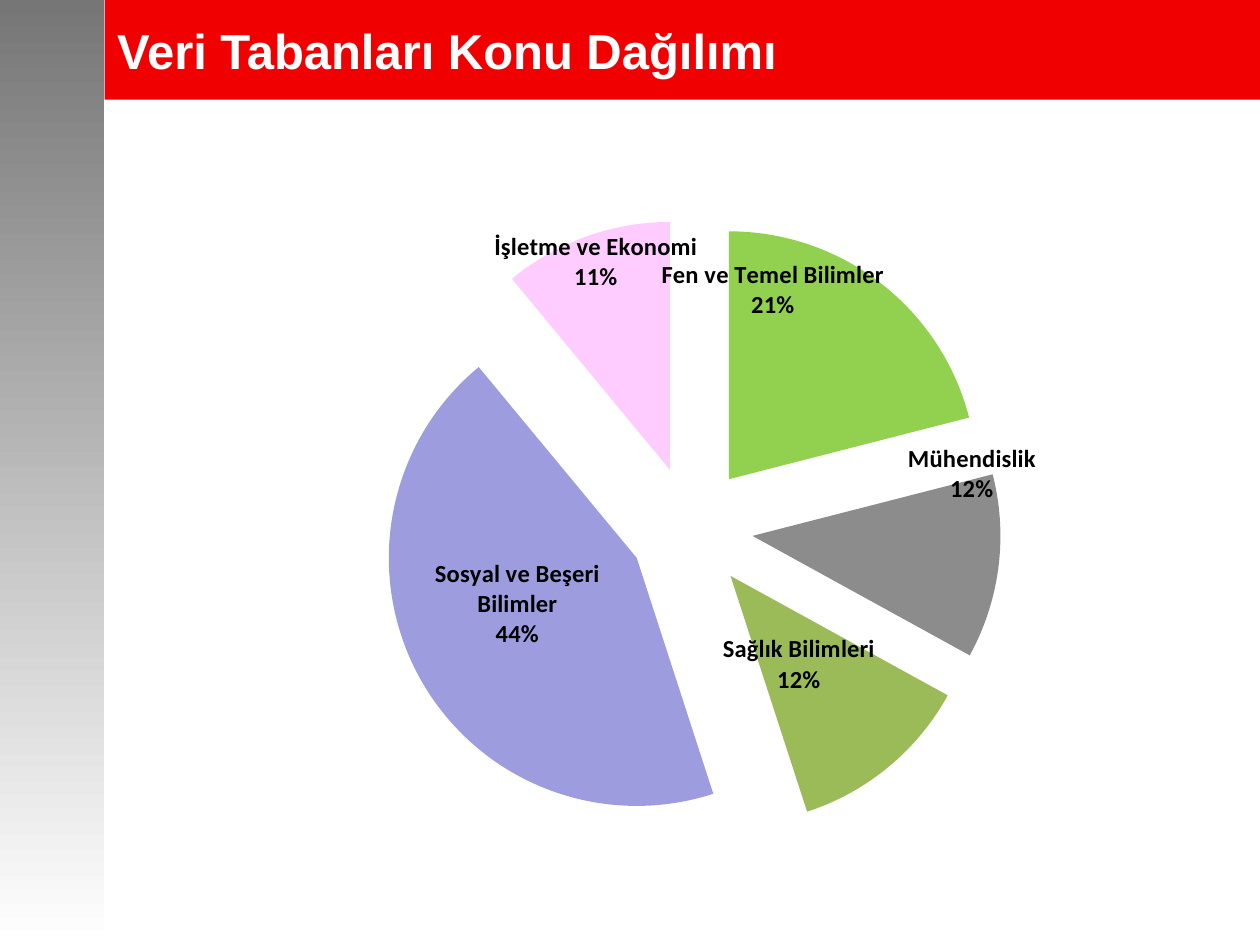
from dataclasses import dataclass

from lxml import etree
from pptx import Presentation
from pptx.chart.data import CategoryChartData
from pptx.dml.color import RGBColor
from pptx.enum.chart import XL_CHART_TYPE, XL_LABEL_POSITION
from pptx.enum.shapes import MSO_SHAPE
from pptx.enum.text import MSO_ANCHOR, MSO_AUTO_SIZE, PP_ALIGN
from pptx.oxml.ns import qn
from pptx.util import Inches, Pt

PIE = XL_CHART_TYPE.PIE_EXPLODED
CENTER = XL_LABEL_POSITION.CENTER
RECTANGLE = MSO_SHAPE.RECTANGLE
MIDDLE = MSO_ANCHOR.MIDDLE
NO_AUTOFIT = MSO_AUTO_SIZE.NONE
LEFT = PP_ALIGN.LEFT

# subject, share, slice colour, label offset
SUBJECTS = [
    ("Fen ve Temel Bilimler", 21, "92D050", (-0.03, -0.13)),
    ("Mühendislik", 12, "8C8C8C", (0.09, -0.11)),
    ("Sağlık Bilimleri", 12, "9BBB59", (-0.01, -0.01)),
    ("Sosyal ve Beşeri Bilimler", 44, "9C9CDF", (-0.01, -0.02)),
    ("İşletme ve Ekonomi", 11, "FFCCFF", (-0.03, -0.13)),
]


@dataclass(frozen=True)
class Theme:
    """Colours, fonts and type sizes of the slide."""

    banner: str = "F00000"
    banner_text: str = "FFFFFF"
    sidebar: tuple = ("767676", "FFFFFF")
    label_text: str = "000000"
    title_font: str = "Arial"
    chart_font: str = "Calibri"
    title_size: int = 28
    chart_size: int = 10
    label_size: int = 14


def add_layout(parent, **values):
    """Append a manual chart layout holding the given values."""
    layout = etree.SubElement(parent, qn("c:layout"))
    manual = etree.SubElement(layout, qn("c:manualLayout"))
    for name, value in values.items():
        etree.SubElement(manual, qn(f"c:{name}")).set("val", str(value))
    return layout


class SlideBuilder:
    """Draws styled elements on the current slide."""

    def __init__(self, slide, theme):
        """Keep the slide and its theme."""
        self.slide = slide
        self.theme = theme

    def style(self, font, name, size, colour, bold=False):
        """Apply a typeface, size and colour to a font."""
        font.name = name
        font.size = Pt(size)
        font.bold = bold
        font.color.rgb = RGBColor.from_string(colour)

    def banner(self, text, left, top, width, height):
        """Fill the title placeholder as a coloured banner."""
        title = self.slide.shapes.title
        title.left, title.top = Inches(left), Inches(top)
        title.width, title.height = Inches(width), Inches(height)
        title.fill.solid()
        title.fill.fore_color.rgb = RGBColor.from_string(self.theme.banner)
        frame = title.text_frame
        frame.text = text
        frame.auto_size = NO_AUTOFIT
        frame.vertical_anchor = MIDDLE
        heading = frame.paragraphs[0]
        heading.alignment = LEFT
        self.style(heading.runs[0].font, self.theme.title_font,
                   self.theme.title_size, self.theme.banner_text, True)

    def sidebar(self, left, top, width, height):
        """Add a strip that fades from top to bottom."""
        strip = self.slide.shapes.add_shape(
            RECTANGLE, Inches(left), Inches(top), Inches(width), Inches(height))
        strip.shadow.inherit = False
        strip.line.fill.background()
        strip.fill.gradient()
        strip.fill.gradient_angle = 270
        for stop, position, colour in zip(
                strip.fill.gradient_stops, (0, 1), self.theme.sidebar):
            stop.position = position
            stop.color.rgb = RGBColor.from_string(colour)

    def pie(self, subjects, left, top, width, height):
        """Add an exploded pie with one labelled slice per subject."""
        shares = CategoryChartData()
        shares.categories = [subject[0] for subject in subjects]
        shares.add_series("Series 1", [subject[1] for subject in subjects])
        chart = self.slide.shapes.add_chart(
            PIE, Inches(left), Inches(top), Inches(width), Inches(height),
            shares).chart
        chart.has_title = False
        chart.has_legend = False
        self.style(chart.font, self.theme.chart_font,
                   self.theme.chart_size, self.theme.label_text)
        plot = chart.plots[0]
        plot.vary_by_categories = True
        self.place_plot(plot)
        series = plot.series[0]
        for index, (_, _, colour, offset) in enumerate(subjects):
            point = series.points[index]
            point.format.fill.solid()
            point.format.fill.fore_color.rgb = RGBColor.from_string(colour)
            point.format.line.fill.background()
            self.slice_label(point.data_label, series, index, offset)
        self.explode(series, 25)

    def place_plot(self, plot):
        """Fix the plot's place inside the chart."""
        area = plot._element.getparent()
        for automatic in area.findall(qn("c:layout")):
            area.remove(automatic)
        area.insert(0, add_layout(
            area, layoutTarget="inner", xMode="edge", yMode="edge",
            x=0.08, y=0.09, w=0.9, h=0.88))

    def slice_label(self, label, series, index, offset):
        """Show subject and percentage, moved from the slice's middle."""
        label.position = CENTER
        self.style(label.font, self.theme.chart_font,
                   self.theme.label_size, self.theme.label_text, True)
        element = series._element.find(qn("c:dLbls")).findall(qn("c:dLbl"))[index]
        element.insert(1, add_layout(element, x=offset[0], y=offset[1]))
        for name, shown in (("showVal", "0"), ("showCatName", "1"),
                            ("showPercent", "1")):
            element.find(qn(f"c:{name}")).set("val", shown)
        etree.SubElement(element, qn("c:separator")).text = "\n"

    def explode(self, series, percent):
        """Pull every slice away from the middle."""
        for old in series._element.findall(qn("c:explosion")):
            series._element.remove(old)
        explosion = etree.Element(qn("c:explosion"))
        explosion.set("val", str(percent))
        series._element.find(qn("c:dPt")).addprevious(explosion)


def main():
    """Build and save the slide."""
    deck = Presentation()
    deck.slide_width, deck.slide_height = Inches(10), Inches(7.5)
    slide = deck.slides.add_slide(deck.slide_layouts[5])
    builder = SlideBuilder(slide, Theme())
    builder.banner("Veri Tabanları Konu Dağılımı", 0.83, 0, 9.17, 0.79)
    builder.sidebar(0, 0, 0.83, 7.5)
    builder.pie(SUBJECTS, 0.98, 1.23, 8.5, 5.59)
    deck.save("out.pptx")


if __name__ == "__main__":
    main()
